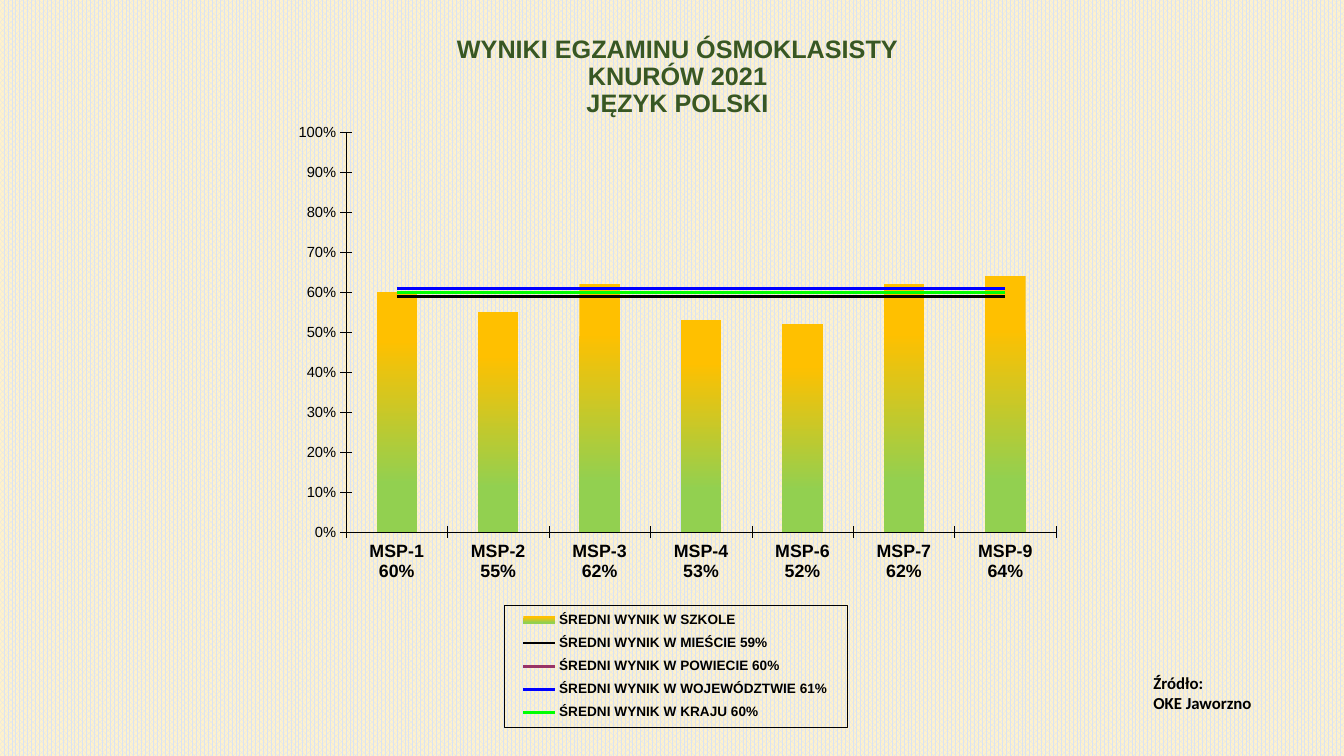
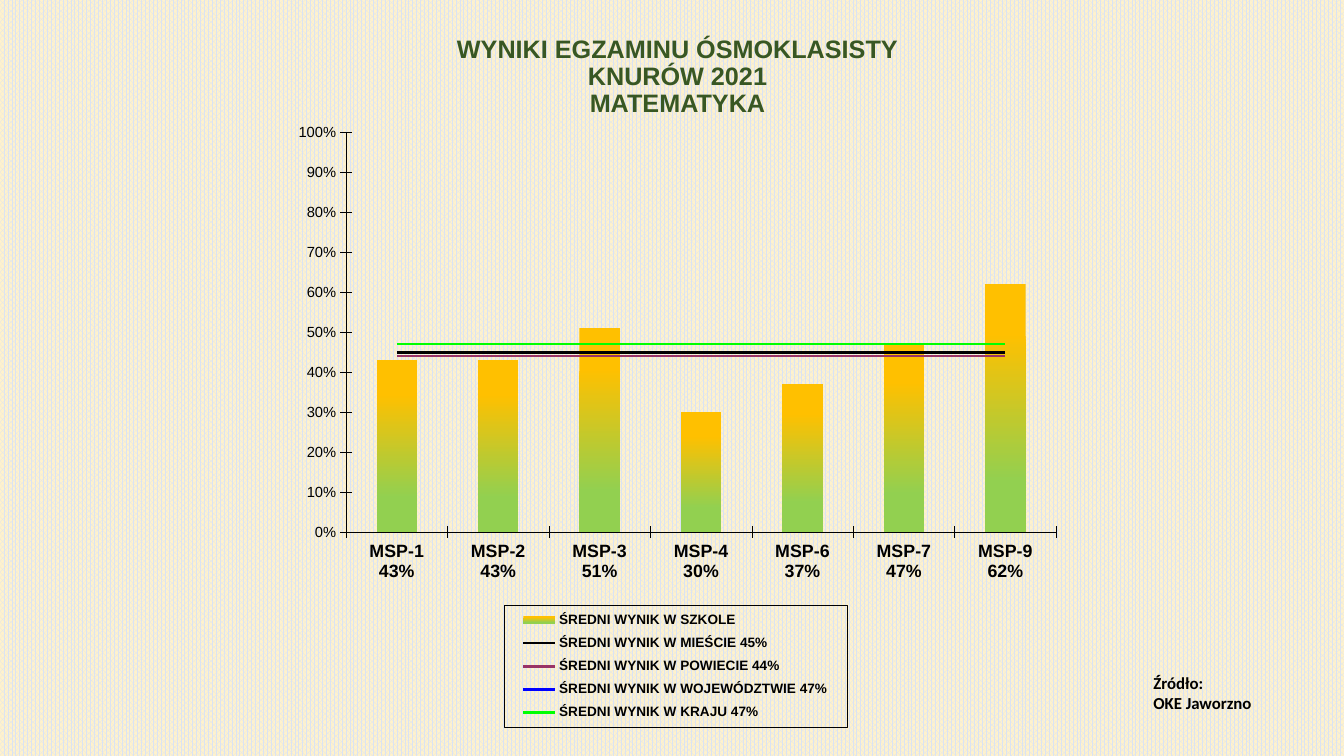
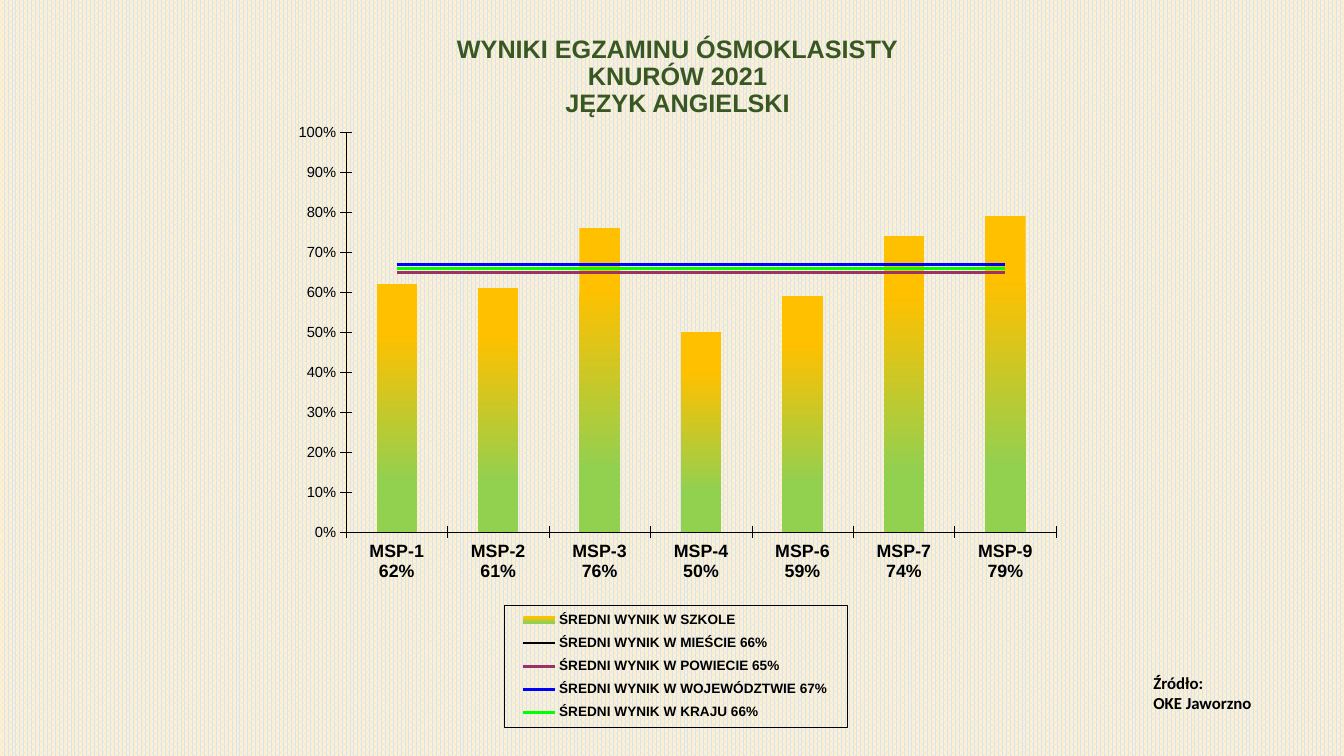
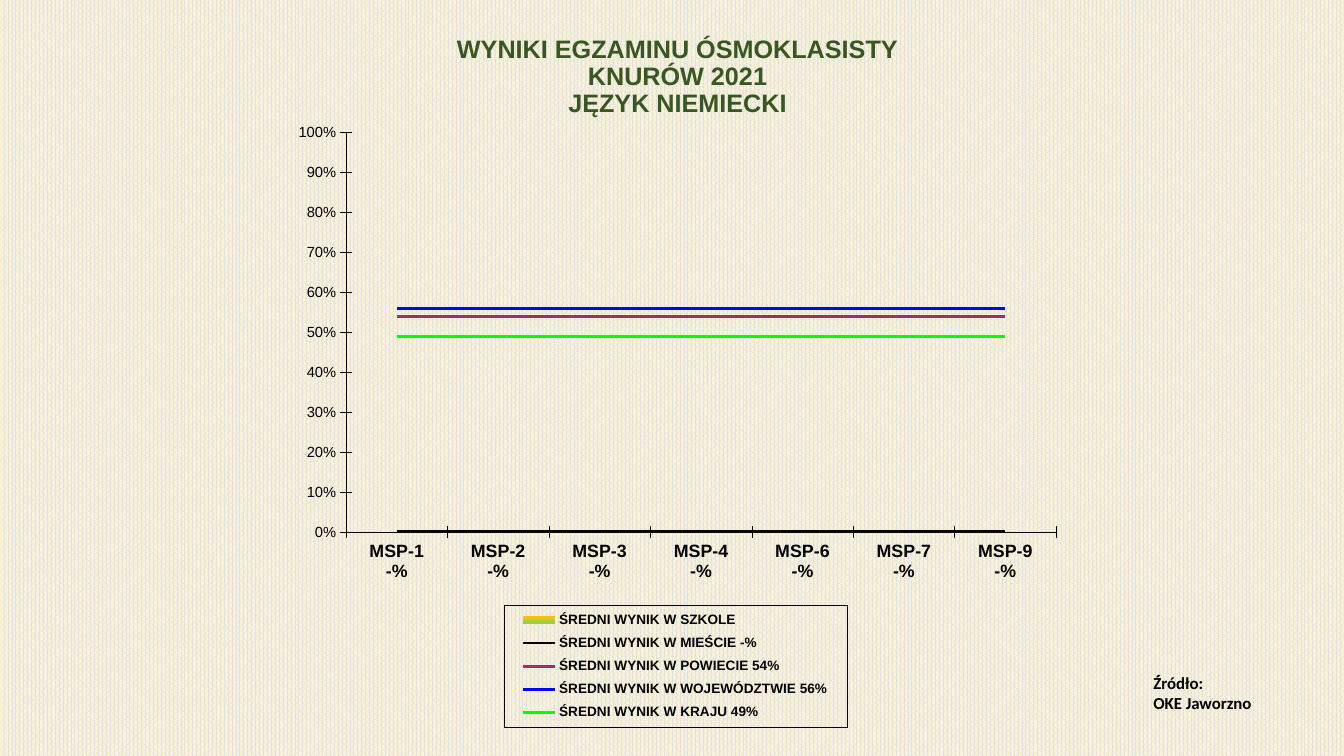
from dataclasses import dataclass

from pptx import Presentation
from pptx.chart.data import CategoryChartData
from pptx.dml.color import RGBColor
from pptx.enum.chart import XL_CHART_TYPE, XL_LEGEND_POSITION, XL_MARKER_STYLE, XL_TICK_MARK
from pptx.enum.dml import MSO_PATTERN
from pptx.enum.text import MSO_ANCHOR, MSO_AUTO_SIZE, PP_ALIGN
from pptx.oxml import parse_xml
from pptx.oxml.ns import nsdecls, qn
from pptx.util import Inches, Pt


@dataclass(frozen=True)
class Theme:
    # Colours
    green: str = "385723"
    black: str = "000000"
    weave: str = "DAE3F3"
    ground: str = "FFF2CC"
    bar: tuple = ((0.2, "FFC000"), (0.8, "92D050"))
    lines: tuple = ("000000", "993366", "0000FF", "00FF00")
    # Fonts and sizes
    font: str = "Arial"
    note_font: str = "Calibri"
    title: float = 18
    note: float = 12
    scale: float = 10.5
    school: float = 12.7
    key: float = 9.7
    thin: float = 0.25
    thick: float = 2.1


SCHOOLS = [f"MSP-{n}" for n in (1, 2, 3, 4, 6, 7, 9)]
AREAS = ("MIEŚCIE", "POWIECIE", "WOJEWÓDZTWIE", "KRAJU")

# Subject, school results, and means for the four areas, in per cent
EXAMS = (
    ("JĘZYK POLSKI", (60, 55, 62, 53, 52, 62, 64), (59, 60, 61, 60)),
    ("MATEMATYKA", (43, 43, 51, 30, 37, 47, 62), (45, 44, 47, 47)),
    ("JĘZYK ANGIELSKI", (62, 61, 76, 50, 59, 74, 79), (66, 65, 67, 66)),
    ("JĘZYK NIEMIECKI", (None,) * 7, (None, 54, 56, 49)),
)

LINE_PLOT = """<c:lineChart {ns}><c:grouping val="standard"/><c:varyColors val="0"/>
<c:marker val="1"/><c:axId val="5001"/><c:axId val="5002"/></c:lineChart>"""
CAT_AXIS = """<c:catAx {ns}><c:axId val="5001"/>
<c:scaling><c:orientation val="minMax"/></c:scaling><c:delete val="1"/>
<c:axPos val="b"/><c:crossAx val="5002"/><c:crosses val="autoZero"/></c:catAx>"""
VAL_AXIS = """<c:valAx {ns}><c:axId val="5002"/>
<c:scaling><c:orientation val="minMax"/><c:max val="1"/><c:min val="0"/></c:scaling>
<c:delete val="1"/><c:axPos val="r"/><c:crossAx val="5001"/><c:crosses val="max"/></c:valAx>"""
CLEAR = "<c:spPr {ns}><a:noFill/><a:ln><a:noFill/></a:ln></c:spPr>"
FRAME = """<c:spPr {ns}><a:noFill/><a:ln w="3175"><a:solidFill>
<a:srgbClr val="{ink}"/></a:solidFill></a:ln></c:spPr>"""


def node(text, **parts):
    return parse_xml(text.format(ns=nsdecls("c", "a"), **parts))


def place(x, y, w, h, inner=False):
    """Manual layout, in shares of the chart."""
    target = '<c:layoutTarget val="inner"/>' if inner else ""
    sizes = "".join(f'<c:{n} val="{v}"/>' for n, v in zip("xywh", (x, y, w, h)))
    return node("<c:layout {ns}><c:manualLayout>" + target
                + '<c:xMode val="edge"/><c:yMode val="edge"/>' + sizes
                + "</c:manualLayout></c:layout>")


def label(rate):
    return "-%" if rate is None else f"{rate}%"


def share(rate):
    return (rate or 0) / 100


class Deck:
    def __init__(self, theme):
        self.theme = theme
        self.prs = Presentation()
        self.prs.slide_width, self.prs.slide_height = Inches(13.33), Inches(7.5)
        self.slide = None
        # Woven ground for every slide
        fill = self.prs.slide_master.background.fill
        fill.patterned()
        fill.pattern = MSO_PATTERN.PERCENT_75
        fill.fore_color.rgb = RGBColor.from_string(theme.weave)
        fill.back_color.rgb = RGBColor.from_string(theme.ground)

    def add(self):
        self.slide = self.prs.slides.add_slide(self.prs.slide_layouts[6])

    def style(self, font, size, bold=False, color=None, name=None):
        font.name = name or self.theme.font
        font.size = Pt(size)
        font.bold = bold
        font.color.rgb = RGBColor.from_string(color or self.theme.black)

    def stroke(self, line, color, width):
        line.color.rgb = RGBColor.from_string(color)
        line.width = Pt(width)

    def text(self, box, paras, size, color=None, name=None):
        frame = self.slide.shapes.add_textbox(*map(Inches, box)).text_frame
        frame.word_wrap = True
        frame.text = "\n".join(paras)
        for para in frame.paragraphs:
            for run in para.runs:
                self.style(run.font, size, True, color, name)
        return frame

    def title(self, subject):
        lines = ("WYNIKI EGZAMINU ÓSMOKLASISTY", "KNURÓW 2021", subject)
        frame = self.text((1.72, 0.37, 10, 0.85), ["\v".join(lines)],
                          self.theme.title, self.theme.green)
        frame.vertical_anchor = MSO_ANCHOR.BOTTOM
        para = frame.paragraphs[0]
        para.alignment = PP_ALIGN.CENTER
        para.line_spacing = 0.9

    def source(self):
        frame = self.text((11.34, 6.62, 1.86, 0.5), ("Źródło:", "OKE Jaworzno"),
                          self.theme.note, name=self.theme.note_font)
        frame.auto_size = MSO_AUTO_SIZE.SHAPE_TO_FIT_TEXT

    def chart(self, rates, means):
        data = CategoryChartData(number_format="0%")
        data.categories = [f"{s}\n{label(r)}" for s, r in zip(SCHOOLS, rates)]
        data.add_series("ŚREDNI WYNIK W SZKOLE ", [share(r) for r in rates])
        for area, mean in zip(AREAS, means):
            data.add_series(f"ŚREDNI WYNIK W {area} {label(mean)}",
                            [share(mean)] * len(SCHOOLS))
        chart = self.slide.shapes.add_chart(
            XL_CHART_TYPE.COLUMN_CLUSTERED,
            *map(Inches, (2.42, 1.23, 9.04, 6.13)), data).chart
        chart.has_title = False
        self.style(chart.font, self.theme.scale)
        self.axes(chart)
        self.split(chart)
        self.bars(chart.plots[0])
        self.means(chart.plots[1])
        self.legend(chart)

    def axes(self, chart):
        value, group = chart.value_axis, chart.category_axis
        value.minimum_scale, value.maximum_scale, value.major_unit = 0, 1, 0.1
        value.tick_labels.number_format = "0%"
        value.tick_labels.number_format_is_linked = False
        for axis, size, bold in ((value, self.theme.scale, False),
                                 (group, self.theme.school, True)):
            axis.has_major_gridlines = False
            axis.major_tick_mark = XL_TICK_MARK.CROSS
            axis.minor_tick_mark = XL_TICK_MARK.NONE
            self.style(axis.tick_labels.font, size, bold)
            self.stroke(axis.format.line, self.theme.black, self.theme.thin)

    def split(self, chart):
        """Move the means to a line plot on hidden second axes."""
        root = chart._chartSpace
        root.find(qn("c:chart")).addnext(node(CLEAR))
        area = root.find(".//" + qn("c:plotArea"))
        bars = area.find(qn("c:barChart"))
        lines = node(LINE_PLOT)
        mark = lines.find(qn("c:marker"))
        for ser in bars.findall(qn("c:ser"))[1:]:
            for flag in ser.findall(qn("c:invertIfNegative")):
                ser.remove(flag)
            mark.addprevious(ser)
        bars.addnext(lines)
        area.find(qn("c:valAx")).addnext(node(CAT_AXIS))
        area.findall(qn("c:catAx"))[-1].addnext(node(VAL_AXIS))
        for old in area.findall(qn("c:layout")):
            area.remove(old)
        area.insert(0, place(0.112, 0.013, 0.779, 0.647, inner=True))
        area.append(node(CLEAR))

    def bars(self, plot):
        plot.gap_width = 150
        plot.vary_by_categories = False
        fill = plot.series[0].format.fill
        fill.gradient()
        fill.gradient_angle = 270
        for stop, (spot, color) in zip(fill.gradient_stops, self.theme.bar):
            stop.position = spot
            stop.color.rgb = RGBColor.from_string(color)

    def means(self, plot):
        for ser, color in zip(plot.series, self.theme.lines):
            self.stroke(ser.format.line, color, self.theme.thick)
            ser.marker.style = XL_MARKER_STYLE.NONE
            ser.smooth = False

    def legend(self, chart):
        chart.has_legend = True
        legend = chart.legend
        legend.position = XL_LEGEND_POSITION.RIGHT
        legend.include_in_layout = False
        self.style(legend.font, self.theme.key, True)
        root = legend._element
        for old in root.findall(qn("c:layout")):
            root.remove(old)
        root.find(qn("c:legendPos")).addnext(place(0.285, 0.778, 0.377, 0.199))
        root.find(qn("c:overlay")).addnext(node(FRAME, ink=self.theme.black))


def main():
    deck = Deck(Theme())
    for subject, rates, means in EXAMS:
        deck.add()
        deck.title(subject)
        deck.chart(rates, means)
        deck.source()
    deck.prs.save("out.pptx")


if __name__ == "__main__":
    main()
